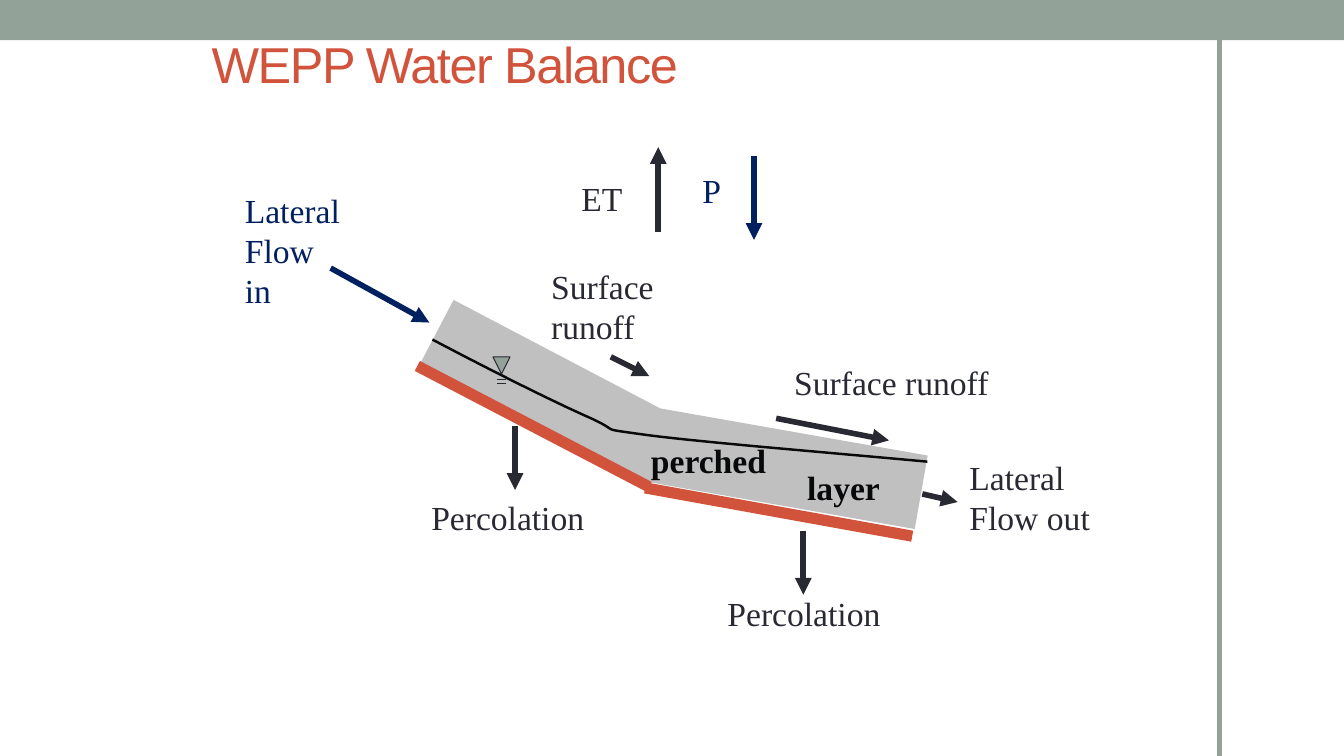
from pptx import Presentation
from pptx.dml.color import RGBColor
from pptx.enum.shapes import MSO_CONNECTOR, MSO_SHAPE
from pptx.enum.text import MSO_ANCHOR
from pptx.oxml.ns import qn
from pptx.util import Pt
from lxml import etree

SAGE = RGBColor(0x93, 0xA2, 0x99)
RUST = RGBColor(0xD2, 0x53, 0x3C)
SOIL = RGBColor(0xC0, 0xC0, 0xC0)
DARK = RGBColor(0x29, 0x29, 0x34)
NAVY = RGBColor(0x00, 0x20, 0x60)
INK = RGBColor(0x08, 0x09, 0x0B)
STRAIGHT = MSO_CONNECTOR.STRAIGHT
RECTANGLE = MSO_SHAPE.RECTANGLE
TRIANGLE = MSO_SHAPE.ISOSCELES_TRIANGLE
TOP, MIDDLE = MSO_ANCHOR.TOP, MSO_ANCHOR.MIDDLE


class Diagram:
    """Draws styled elements on one slide; all lengths are in points."""

    label_format = {"name": "Times New Roman", "size": Pt(24), "bold": False}
    title_format = {"name": "Arial", "size": Pt(36), "bold": False}

    def __init__(self, slide):
        self.slide = slide
        self.shapes = slide.shapes

    def block(self, kind, left, top, width, height, fill, rotation=0, outline=None):
        block = self.shapes.add_shape(kind, Pt(left), Pt(top), Pt(width), Pt(height))
        block.shadow.inherit = False
        block.rotation = rotation
        block.fill.solid()
        block.fill.fore_color.rgb = fill
        if outline is None:
            block.line.fill.background()
        else:
            block.line.color.rgb = outline
            block.line.width = Pt(0.75)

    def line(self, start, end, color, width):
        line = self.shapes.add_connector(STRAIGHT, *map(Pt, start + end))
        line.line.color.rgb = color
        line.line.width = Pt(width)
        etree.SubElement(line._element.spPr, qn("a:effectLst"))
        return line

    def arrow(self, start, end, color=DARK):
        arrow = self.line(start, end, color, 4)
        etree.SubElement(arrow.line._get_or_add_ln(), qn("a:tailEnd"), type="triangle")

    def curve(self, start, segments, color, width, steps=16):
        points = []
        origin = start
        for c1, c2, end in segments:
            for step in range(1, steps + 1):
                t = step / steps
                u = 1 - t
                points.append(tuple(
                    Pt(u**3 * a + 3 * u * u * t * b + 3 * u * t * t * c + t**3 * d)
                    for a, b, c, d in zip(origin, c1, c2, end)))
            origin = end
        builder = self.shapes.build_freeform(Pt(start[0]), Pt(start[1]))
        builder.add_line_segments(points, close=False)
        curve = builder.convert_to_shape()
        curve.shadow.inherit = False
        curve.fill.background()
        curve.line.color.rgb = color
        curve.line.width = Pt(width)

    def text(self, words, left, top, width, height, color=DARK, wrap=False,
             anchor=TOP, base=None, spacing=None, **changes):
        box = self.shapes.add_textbox(Pt(left), Pt(top), Pt(width), Pt(height))
        frame = box.text_frame
        frame.word_wrap = wrap
        frame.vertical_anchor = anchor
        frame.text = words
        for paragraph in frame.paragraphs:
            for run in paragraph.runs:
                for key, value in {**(base or self.label_format), **changes}.items():
                    setattr(run.font, key, value)
                run.font.color.rgb = color
                if spacing is not None:
                    run._r.get_or_add_rPr().set("spc", str(spacing))


def main():
    prs = Presentation()
    prs.slide_width, prs.slide_height = Pt(960), Pt(540)
    diagram = Diagram(prs.slides.add_slide(prs.slide_layouts[6]))

    # Slide frame and title
    diagram.block(RECTANGLE, 0, 0, 960, 28.8, SAGE)
    diagram.line((871.2, 27.4), (871.2, 540), SAGE, 3.25)
    diagram.text("WEPP Water Balance", 144, 0, 696, 90, RUST, wrap=True,
                 anchor=MIDDLE, base=Diagram.title_format, spacing=-100)

    # Soil layers, each on its restrictive bed
    diagram.block(RECTANGLE, 465.8, 308.2, 193.7, 53.3, SOIL, rotation=10)
    diagram.line((460.8, 348.5), (651.6, 383), RUST, 8)
    diagram.block(RECTANGLE, 301, 254.2, 185, 53.3, SOIL, rotation=27.7)
    diagram.line((298.1, 261.4), (463.7, 347.8), RUST, 8)

    # Flow arrows
    for start, end, color in [
        ((573.8, 379.4), (573.8, 424.8), DARK),  # lower percolation
        ((367.9, 304.6), (367.9, 350), DARK),    # upper percolation
        ((658.8, 352.8), (684, 358.6), DARK),    # lateral flow out
        ((554.4, 298.8), (635, 314.6), DARK),    # lower surface runoff
        ((436.3, 254.9), (463.7, 268.6), DARK),  # upper surface runoff
        ((236.2, 191.5), (306.7, 230.4), NAVY),  # lateral flow in
        ((470.2, 165.6), (470.2, 105.1), DARK),  # evapotranspiration
        ((538.6, 111.6), (538.6, 171.4), NAVY),  # precipitation
    ]:
        diagram.arrow(start, end, color)

    # Flow labels
    for left, top in [(512.6, 419.8), (301, 351.4)]:
        diagram.text("Percolation", left, top, 127.4, 36.7)
    diagram.text("Lateral\nFlow out", 685.4, 322.6, 103.7, 67)
    diagram.text("Surface runoff", 560.2, 254.9, 158.4, 36.7)
    diagram.text("Surface runoff", 386.6, 186.5, 149, 67, wrap=True)
    diagram.text("Lateral\nFlow in", 167.8, 131.8, 87.8, 97.9, NAVY, wrap=True)
    diagram.text("ET", 408.2, 123.8, 44.6, 36.7)
    diagram.text("P", 494.6, 118.1, 28.8, 37.4, NAVY)

    # Perched layer label
    diagram.text("perched", 457.9, 311, 111.6, 37.4, INK, wrap=True, bold=True)
    diagram.text("layer", 569.5, 329.8, 69.1, 37.4, INK, bold=True)

    # Water table and its level mark
    diagram.curve((308.9, 242.6), [
        ((351.4, 265), (394.6, 286.6), (420.5, 298.1)),
        ((446.4, 309.6), (423.4, 305.3), (463.7, 311)),
        ((504, 316.1), (583.2, 322.6), (662.4, 329.8)),
    ], INK, 1.75)
    diagram.block(TRIANGLE, 352.1, 254.9, 12.2, 12.2, SAGE, rotation=180, outline=DARK)
    for y in (271.4, 273.6):
        diagram.line((355, y), (361.2, y), DARK, 0.75)

    prs.save("out.pptx")


if __name__ == "__main__":
    main()
